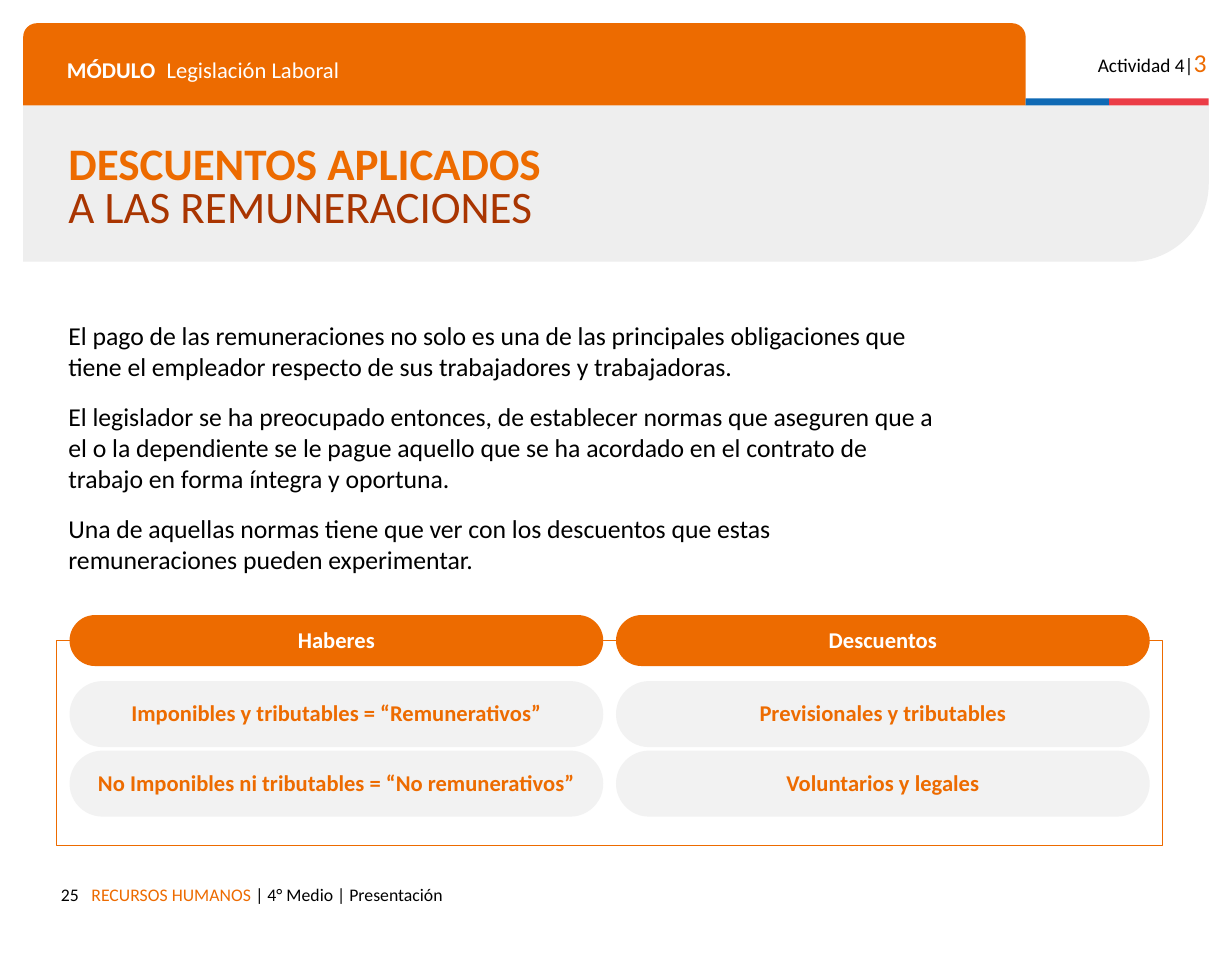
from lxml.etree import SubElement
from pptx import Presentation
from pptx.dml.color import RGBColor as RGB
from pptx.enum.shapes import MSO_SHAPE as Kind
from pptx.enum.text import MSO_ANCHOR as Anchor, MSO_AUTO_SIZE as Fit, PP_ALIGN as Align
from pptx.oxml.ns import qn
from pptx.util import Inches, Pt

HUES = {
    "orange": "ED6B00", "rust": "A93501", "blue": "0F69B4", "red": "EB3C46",
    "band": "EEEEEE", "pill": "F2F2F2", "white": "FFFFFF", "black": "000000",
}
BODY = [
    "El pago de las remuneraciones no solo es una de las principales obligaciones que "
    "tiene el empleador respecto de sus trabajadores y trabajadoras.",
    "El legislador se ha preocupado entonces, de establecer normas que aseguren que a "
    "el o la dependiente se le pague aquello que se ha acordado en el contrato de "
    "trabajo en forma íntegra y oportuna.",
    "Una de aquellas normas tiene que ver con los descuentos que estas "
    "remuneraciones pueden experimentar.",
]
GROUPS = [
    ("Haberes", "Imponibles y tributables = “Remunerativos”",
     "No Imponibles ni tributables = “No remunerativos”"),
    ("Descuentos", "Previsionales y tributables", "Voluntarios y legales"),
]


def hue(name):
    """Return the named colour."""
    return RGB.from_string(HUES[name])


def say(para, text, size=14, color="black", bold=False):
    """Add one formatted run to a paragraph."""
    run = para.add_run()
    run.text = text
    font = run.font
    font.name, font.size, font.bold = "Calibri", Pt(size), bold
    font.color.rgb = hue(color)


def setup(frame, pad=0.1, anchor=Anchor.TOP):
    """Set wrapping, insets and anchor, and return the first paragraph."""
    frame.word_wrap, frame.auto_size = True, Fit.NONE
    frame.vertical_anchor = anchor
    frame.margin_left = frame.margin_right = Inches(0.1)
    frame.margin_top = frame.margin_bottom = Inches(pad)
    return frame.paragraphs[0]


def label(slide, box, align=Align.LEFT):
    """Add a text box and return its paragraph."""
    para = setup(slide.shapes.add_textbox(*map(Inches, box)).text_frame)
    para.alignment = align
    return para


def block(slide, kind, box, fill=None, line=None, adjust=()):
    """Add a flat shape."""
    shape = slide.shapes.add_shape(kind, *map(Inches, box))
    shape.shadow.inherit = False
    for i, value in enumerate(adjust):
        shape.adjustments[i] = value
    if fill:
        shape.fill.solid()
        shape.fill.fore_color.rgb = hue(fill)
    else:
        shape.fill.background()
    if line:
        shape.line.color.rgb = hue(line)
        shape.line.width = Pt(0.75)
    else:
        shape.line.fill.background()
    return shape


def place(holder, box):
    """Move a placeholder into its box, in front of the shapes so far."""
    holder.left, holder.top, holder.width, holder.height = map(Inches, box)
    holder.element.getparent().append(holder.element)


def header(slide, x, y, w, h):
    """Draw the module tab, the colour strip and the title band."""
    tab, rise, strip, blue = 8.65, 0.71, 0.06, 0.72
    base = y + rise
    band = block(slide, Kind.ROUND_1_RECTANGLE, (x, base, w, h - rise), "band", adjust=[0.5])
    band.element.spPr.get_or_add_xfrm().set("flipV", "1")
    block(slide, Kind.ROUND_2_SAME_RECTANGLE, (x, y, tab, rise), "orange", adjust=[0.167, 0])
    left = x + tab
    block(slide, Kind.RECTANGLE, (left, base - strip, blue, strip), "blue")
    block(slide, Kind.RECTANGLE, (left + blue, base - strip, w - tab - blue, strip), "red")
    say(label(slide, (x + 0.28, y + 0.18, 1.2, 0.35)), "MÓDULO", color="white", bold=True)
    say(label(slide, (x + 1.14, y + 0.18, 6, 0.35)), "Legislación Laboral", color="white")
    mark = label(slide, (x + w - 1.2, y + 0.1, 1.28, 0.38), Align.RIGHT)
    say(mark, "Actividad 4|", size=12)
    say(mark, "3", size=16, color="orange")
    title = slide.shapes.title
    place(title, (x + 0.29, base + 0.2, 4.54, 1.04))
    para = setup(title.text_frame, anchor=Anchor.MIDDLE)
    para.alignment, para.line_spacing = Align.LEFT, 0.8
    say(para, "DESCUENTOS APLICADOS ", size=28, color="orange", bold=True)
    say(para, "A LAS REMUNERACIONES", size=28, color="rust")


def prose(slide, *box):
    """Fill the body placeholder with plain paragraphs."""
    body = slide.placeholders[1]
    place(body, box)
    frame = body.text_frame
    para = setup(frame, pad=0.05)
    for i, text in enumerate(BODY):
        if i:
            para = frame.add_paragraph()
        para.space_before, para.space_after = Pt(0), Pt(12)
        props = para._p.get_or_add_pPr()
        props.set("marL", "0")
        props.set("indent", "0")
        SubElement(props, qn("a:buNone"))
        say(para, text, size=16)


def pill(slide, box, text, fill, color):
    """Draw a rounded label with centred text."""
    shape = block(slide, Kind.ROUNDED_RECTANGLE, box, fill, adjust=[0.5])
    para = setup(shape.text_frame, pad=0.05, anchor=Anchor.MIDDLE)
    para.alignment, para.line_spacing = Align.CENTER, Pt(15)
    say(para, text, color=color, bold=True)


def groups(slide, x, y, w, h):
    """Draw the frame and its columns of pills."""
    gap, head, row, step = 0.11, 0.44, 0.57, 0.6
    block(slide, Kind.RECTANGLE, (x, y, w, h), line="orange")
    wide = (w - gap * (len(GROUPS) + 1)) / len(GROUPS)
    for col, (name, *items) in enumerate(GROUPS):
        left = x + gap + col * (wide + gap)
        pill(slide, (left, y - head / 2, wide, head), name, "orange", "white")
        for i, item in enumerate(items):
            pill(slide, (left, y + 0.35 + i * step, wide, row), item, "pill", "orange")


def footer(slide, x, y, w, h):
    """Write the page number and the course line."""
    num = 0.58
    say(label(slide, (x, y, num, h), Align.RIGHT), "25", size=11)
    para = label(slide, (x + num - 0.09, y, w - num, h))
    say(para, "RECURSOS HUMANOS ", size=11, color="orange")
    say(para, "| 4° Medio | Presentación", size=11)


def main():
    """Build and save the slide."""
    deck = Presentation()
    deck.slide_width, deck.slide_height = Inches(10.63), Inches(8.27)
    slide = deck.slides.add_slide(deck.slide_layouts[1])
    header(slide, 0.2, 0.2, 10.23, 2.06)
    prose(slide, 0.49, 2.71, 7.68, 2.49)
    groups(slide, 0.49, 5.53, 9.54, 1.77)
    footer(slide, 0.2, 7.53, 7.63, 0.38)
    deck.save("out.pptx")


if __name__ == "__main__":
    main()
